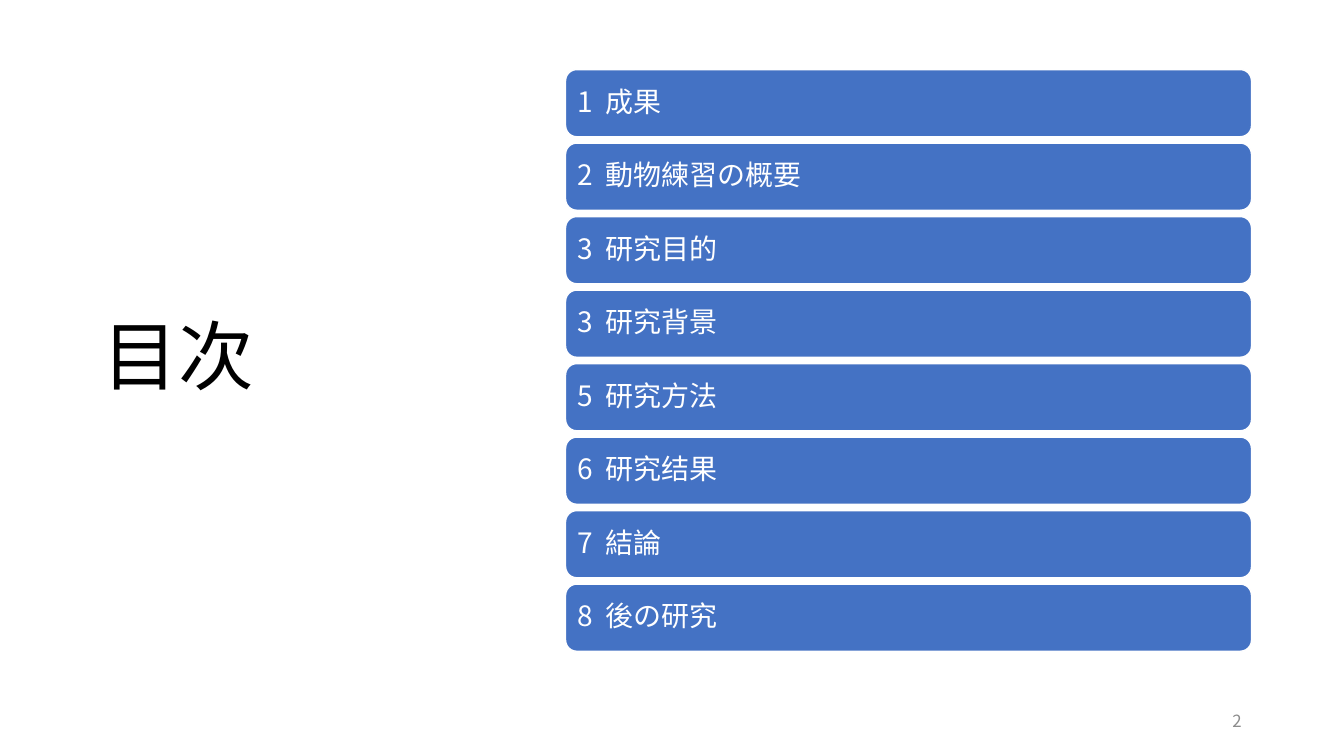
from lxml import etree
from pptx import Presentation
from pptx.dml.color import RGBColor
from pptx.enum.shapes import MSO_SHAPE as Shape
from pptx.enum.text import MSO_ANCHOR as Anchor, PP_ALIGN as Align
from pptx.oxml.ns import qn
from pptx.util import Pt

FONT = "Noto Sans CJK JP"


def color(value):
    return RGBColor.from_string(value)


def write(shape, text, size, ink, align=Align.LEFT, line_spacing=1.0,
          space_after=0, tab=None):
    frame = shape.text_frame
    frame.word_wrap = True
    frame.vertical_anchor = Anchor.MIDDLE
    paragraph = frame.paragraphs[0]
    paragraph.alignment = align
    paragraph.line_spacing = line_spacing
    paragraph.space_after = Pt(space_after)
    if tab:
        tab_list = etree.SubElement(paragraph._p.get_or_add_pPr(), qn("a:tabLst"))
        etree.SubElement(tab_list, qn("a:tab"), pos=str(Pt(tab)), algn="l")
    run = paragraph.add_run()
    run.text = text
    run.font.name = FONT
    run.font.size = Pt(size)
    run.font.color.rgb = color(ink)
    east_asian = etree.SubElement(run._r.get_or_add_rPr(), qn("a:ea"))
    east_asian.set("typeface", FONT)


presentation = Presentation()
presentation.slide_width = Pt(960)
presentation.slide_height = Pt(540)
slide = presentation.slides.add_slide(presentation.slide_layouts[5])

# Title
title = slide.shapes.title
title.left, title.top, title.width, title.height = Pt(66), Pt(43), Pt(284), Pt(428)
write(title, "目次", 54, "000000", line_spacing=0.9)

# Contents: one bar per chapter
chapters = [
    (1, "成果"),
    (2, "動物練習の概要"),
    (3, "研究目的"),
    (3, "研究背景"),
    (5, "研究方法"),
    (6, "研究结果"),
    (7, "結論"),
    (8, "後の研究"),
]
BAR_TOP, BAR_STEP = 49.7, 52.5
for row, (number, chapter) in enumerate(chapters):
    bar = slide.shapes.add_shape(
        Shape.ROUNDED_RECTANGLE, Pt(404), Pt(BAR_TOP + row * BAR_STEP), Pt(490), Pt(48))
    bar.shadow.inherit = False
    bar.fill.solid()
    bar.fill.fore_color.rgb = color("4472C4")
    bar.line.color.rgb = color("FFFFFF")
    bar.line.width = Pt(1)
    frame = bar.text_frame
    frame.margin_left = frame.margin_right = Pt(6)
    frame.margin_top = frame.margin_bottom = Pt(6)
    write(bar, f"{number}\t{chapter}", 20, "FFFFFF",
          line_spacing=0.9, space_after=7, tab=20)

# Slide number
slide_number = slide.shapes.add_textbox(Pt(678), Pt(500.5), Pt(216), Pt(28.8))
write(slide_number, "2", 12, "8C8C8C", align=Align.RIGHT)

presentation.save("out.pptx")
